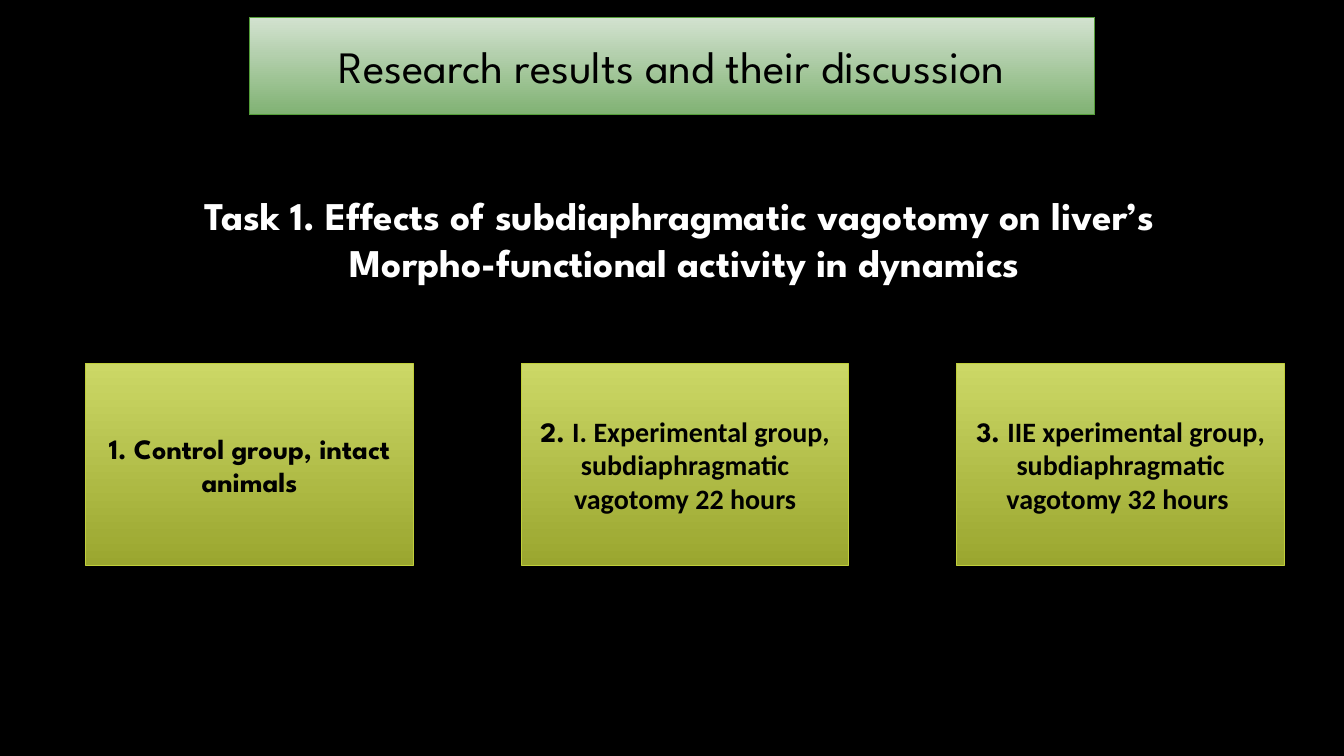
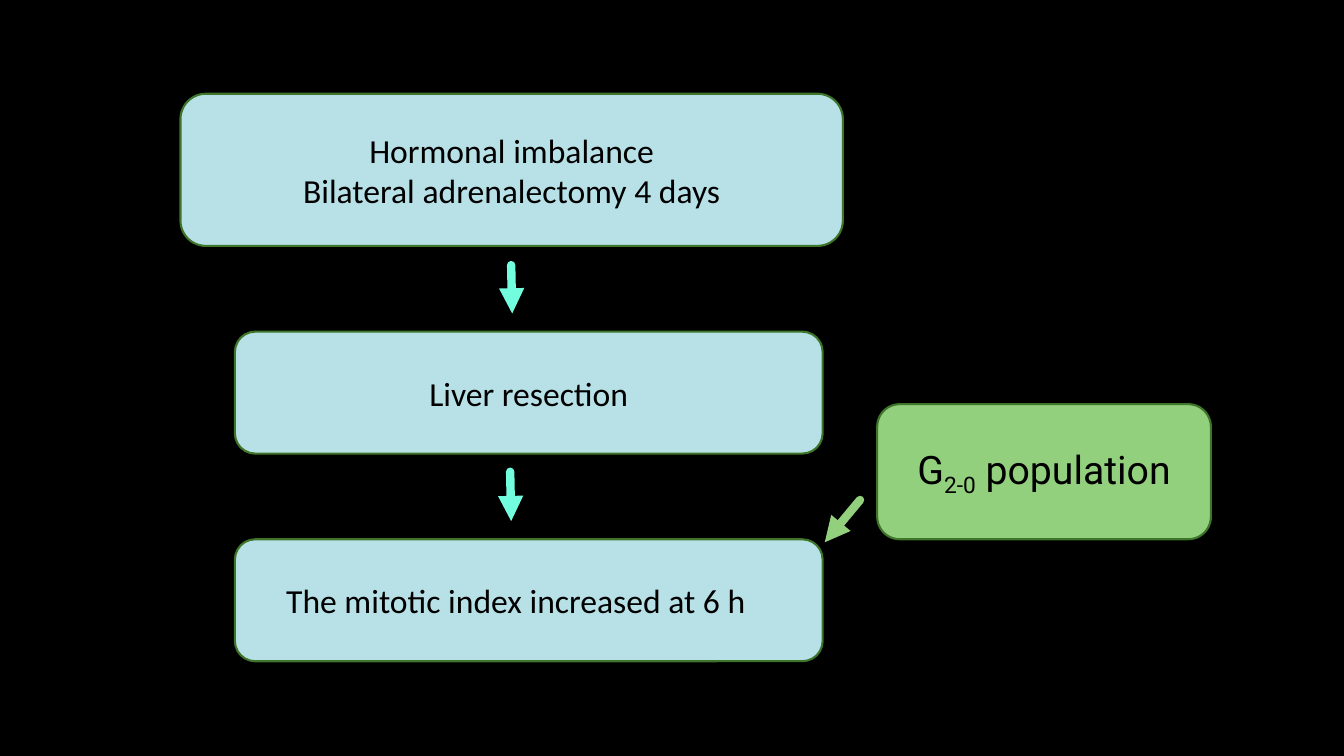
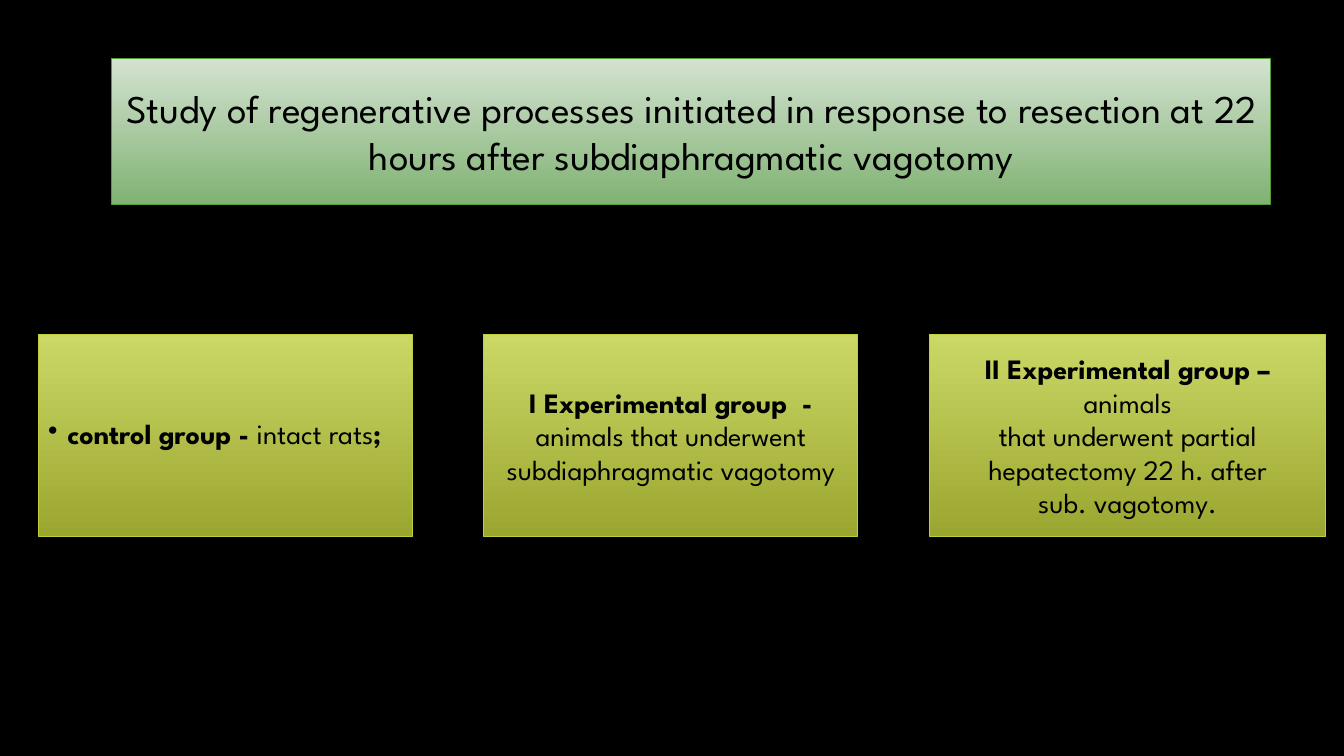
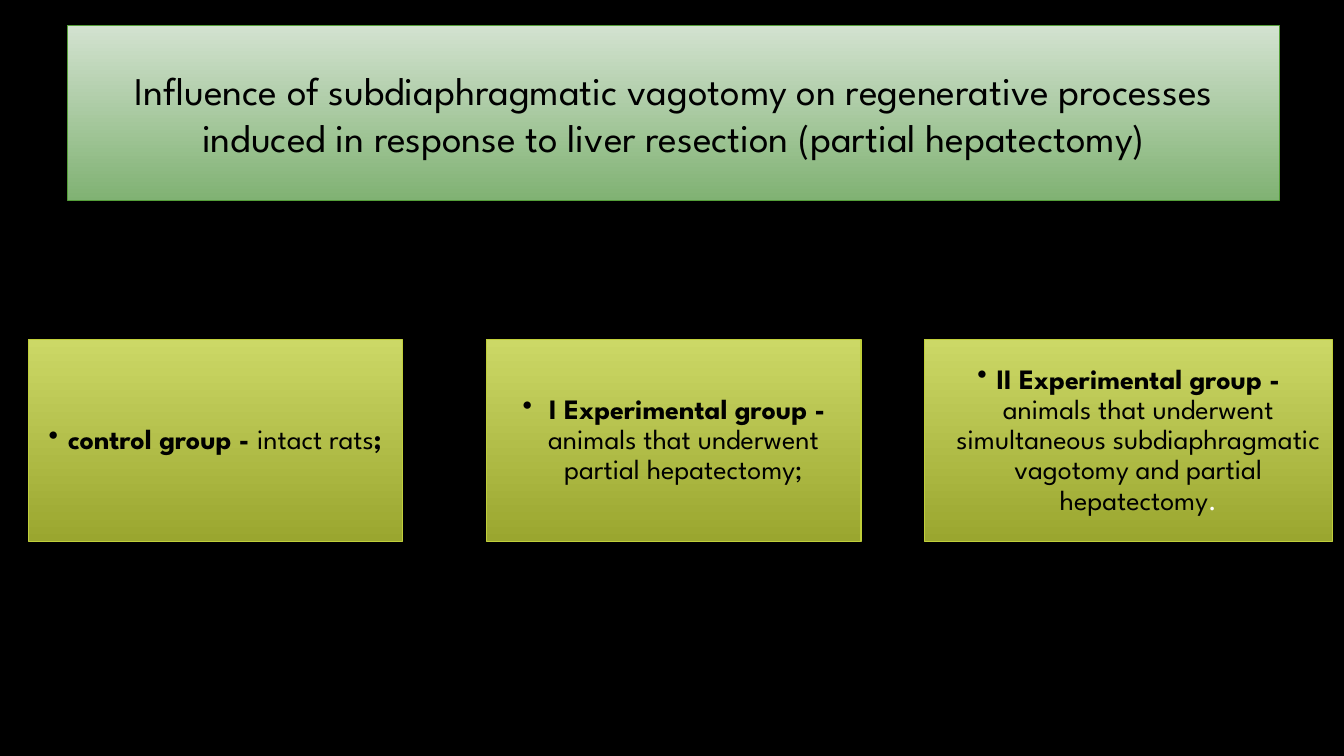
from dataclasses import dataclass

from lxml import etree
from pptx import Presentation
from pptx.dml.color import RGBColor
from pptx.enum.shapes import MSO_CONNECTOR, MSO_SHAPE
from pptx.enum.text import MSO_ANCHOR, PP_ALIGN
from pptx.oxml.ns import qn
from pptx.util import Inches, Pt

RECTANGLE = MSO_SHAPE.RECTANGLE
ROUNDED = MSO_SHAPE.ROUNDED_RECTANGLE
STRAIGHT = MSO_CONNECTOR.STRAIGHT
MIDDLE = MSO_ANCHOR.MIDDLE
TOP = MSO_ANCHOR.TOP
CENTER = PP_ALIGN.CENTER
LEFT = PP_ALIGN.LEFT


@dataclass(frozen=True)
class Theme:
    background: str = "000000"
    ink: str = "000000"
    light: str = "FFFFFF"
    banner: tuple = ("D3E2D0", "80B273")
    banner_edge: str = "549E39"
    card: tuple = ("CCD866", "9AA62F")
    card_edge: str = "C0CF3A"
    step: str = "B7E1E7"
    population: str = "93D07D"
    step_edge: str = "3E752A"
    arrow: str = "72FDDF"
    display: str = "League Spartan"
    body: str = "Calibri"
    formula: str = "Roboto"
    headline: int = 32
    heading: int = 28
    step_size: int = 24
    card_size: int = 20
    hanging: float = 0.19
    subscript: int = -25000


THEME = Theme()
BOLD = {"bold": True}
STEP_TEXT = {"name": THEME.body, "size": Pt(THEME.step_size)}
CARD_TEXT = {"name": THEME.display, "size": Pt(THEME.card_size)}


def rgb(value):
    return RGBColor.from_string(value)


def paint(fill, colours):
    if isinstance(colours, str):
        fill.solid()
        fill.fore_color.rgb = rgb(colours)
        return
    fill.gradient()
    fill.gradient_angle = 270
    for stop, colour in zip(fill.gradient_stops, colours):
        stop.color.rgb = rgb(colour)


def write(shape, paragraphs, text_format, align=CENTER, anchor=MIDDLE,
          colour=THEME.ink, bullet=False):
    frame = shape.text_frame
    frame.word_wrap = True
    frame.vertical_anchor = anchor
    for index, runs in enumerate(paragraphs):
        paragraph = frame.paragraphs[0] if index == 0 else frame.add_paragraph()
        paragraph.alignment = align
        if bullet:
            add_bullet(paragraph)
        for text, changes in runs:
            values = {**text_format, **changes}
            run = paragraph.add_run()
            run.text = text
            run.font.color.rgb = rgb(values.pop("colour", colour))
            baseline = values.pop("baseline", None)
            for name, value in values.items():
                setattr(run.font, name, value)
            if baseline is not None:
                run._r.get_or_add_rPr().set("baseline", str(baseline))


def add_bullet(paragraph):
    properties = paragraph._p.get_or_add_pPr()
    properties.set("marL", str(Inches(THEME.hanging)))
    properties.set("indent", str(-Inches(THEME.hanging)))
    etree.SubElement(properties, qn("a:buChar")).set("char", "•")
    paragraph.line_spacing = 0.9


def add_box(slide, kind, place, colours, edge, edge_width):
    box = slide.shapes.add_shape(kind, *map(Inches, place))
    box.shadow.inherit = False
    paint(box.fill, colours)
    box.line.color.rgb = rgb(edge)
    box.line.width = Pt(edge_width)
    return box


def add_banner(slide, place, title, size=THEME.heading):
    banner = add_box(slide, RECTANGLE, place, THEME.banner, THEME.banner_edge, 0.75)
    write(banner, [[(title, {})]], {"name": THEME.display, "size": Pt(size)})


def add_card(slide, place, paragraphs, **layout):
    card = add_box(slide, RECTANGLE, place, THEME.card, THEME.card_edge, 0.75)
    write(card, paragraphs, CARD_TEXT, **layout)


def add_step(slide, place, paragraphs=(), colour=THEME.step, text_format=STEP_TEXT):
    step = add_box(slide, ROUNDED, place, colour, THEME.step_edge, 1.5)
    write(step, paragraphs, text_format)


def add_label(slide, place, paragraphs, text_format, **layout):
    label = slide.shapes.add_textbox(*map(Inches, place))
    write(label, paragraphs, text_format, anchor=TOP, **layout)


def add_arrow(slide, start, end, colour):
    arrow = slide.shapes.add_connector(STRAIGHT, *map(Inches, start + end))
    arrow.line.color.rgb = rgb(colour)
    arrow.line.width = Pt(6)
    outline = arrow.line._get_or_add_ln()
    outline.set("cap", "rnd")
    etree.SubElement(outline, qn("a:tailEnd")).set("type", "triangle")
    etree.SubElement(arrow._element.spPr, qn("a:effectLst"))


def build_task(slide):
    add_banner(slide, (2.47, 0.17, 8.39, 0.97),
               "Research results and their discussion", THEME.headline)
    add_label(slide, (1.37, 1.85, 10.84, 1.04), [
        [("Task 1. Effects of subdiaphragmatic vagotomy on liver’s ", BOLD)],
        [("Morpho-functional activity in dynamics", BOLD)],
    ], {"name": THEME.display, "size": Pt(THEME.heading)}, colour=THEME.light)
    detail = {"name": THEME.body, **BOLD}
    groups = [
        [("1. Control group, intact animals", BOLD)],
        [("2. ", BOLD),
         ("I. Experimental group, subdiaphragmatic vagotomy 22 hours", detail)],
        [("3. ", BOLD),
         ("IIE xperimental group, subdiaphragmatic vagotomy 32 hours ", detail)],
    ]
    for index, group in enumerate(groups):
        add_card(slide, (0.85 + index * 4.32, 3.61, 3.25, 2), [group])


def build_mitosis(slide):
    add_step(slide, (1.79, 0.93, 6.57, 1.51),
             [[("Hormonal imbalance", {})], [("Bilateral adrenalectomy 4 days", {})]])
    add_step(slide, (2.33, 3.29, 5.83, 1.21), [[("Liver resection", {})]])
    add_arrow(slide, (5.07, 2.63), (5.08, 3.11), THEME.arrow)
    add_step(slide, (2.33, 5.35, 5.83, 1.21))
    add_arrow(slide, (5.06, 4.68), (5.07, 5.17), THEME.arrow)
    add_step(slide, (8.7, 4.01, 3.31, 1.34),
             [[("G", {}), ("2-0", {"baseline": THEME.subscript}), (" population", {})]],
             THEME.population, {"name": THEME.formula, "size": Pt(THEME.heading)})
    add_arrow(slide, (8.53, 4.96), (8.18, 5.38), THEME.population)
    add_label(slide, (2.74, 5.7, 5, 0.5),
              [[("The mitotic index increased at 6 h", {})]], STEP_TEXT, align=LEFT)


CONTROL_GROUP = [[("control group - ", BOLD), ("intact rats", {}), (";", BOLD)]]


def build_resection_after_vagotomy(slide):
    add_banner(slide, (1.11, 0.58, 11.49, 1.45),
               "Study of regenerative processes initiated in response to resection "
               "at 22 hours after subdiaphragmatic vagotomy")
    add_card(slide, (0.38, 3.32, 3.71, 2), CONTROL_GROUP, align=LEFT, bullet=True)
    add_card(slide, (4.8, 3.32, 3.71, 2), [
        [("I Experimental group  - ", BOLD),
         ("animals that underwent subdiaphragmatic vagotomy", {})],
    ])
    add_card(slide, (9.22, 3.32, 3.93, 2), [
        [("II Experimental group – ", BOLD), ("animals", {})],
        [("that underwent partial hepatectomy 22 h. after", {})],
        [("sub. vagotomy.", {})],
    ])


def build_simultaneous_surgery(slide):
    add_banner(slide, (0.67, 0.25, 12.02, 1.74),
               "Influence of subdiaphragmatic vagotomy on regenerative processes "
               "induced in response to liver resection (partial hepatectomy)")
    groups = [
        (0.28, 3.71, CONTROL_GROUP),
        (4.83, 3.71, [[
            (" I Experimental group - ", BOLD),
            ("animals that underwent partial hepatectomy;", {}),
        ]]),
        (9.17, 4.05, [[
            ("II Experimental group - ", BOLD),
            ("animals that underwent simultaneous subdiaphragmatic vagotomy "
             "and partial hepatectomy", {}),
            (".", {"colour": THEME.light}),
        ]]),
    ]
    for left, width, paragraphs in groups:
        add_card(slide, (left, 3.37, width, 2), paragraphs, bullet=True)


def main():
    deck = Presentation()
    deck.slide_width = Inches(13.33)
    deck.slide_height = Inches(7.5)
    paint(deck.slide_master.background.fill, THEME.background)
    blank = deck.slide_layouts[6]
    for build in (build_task, build_mitosis, build_resection_after_vagotomy,
                  build_simultaneous_surgery):
        build(deck.slides.add_slide(blank))
    deck.save("out.pptx")


if __name__ == "__main__":
    main()
